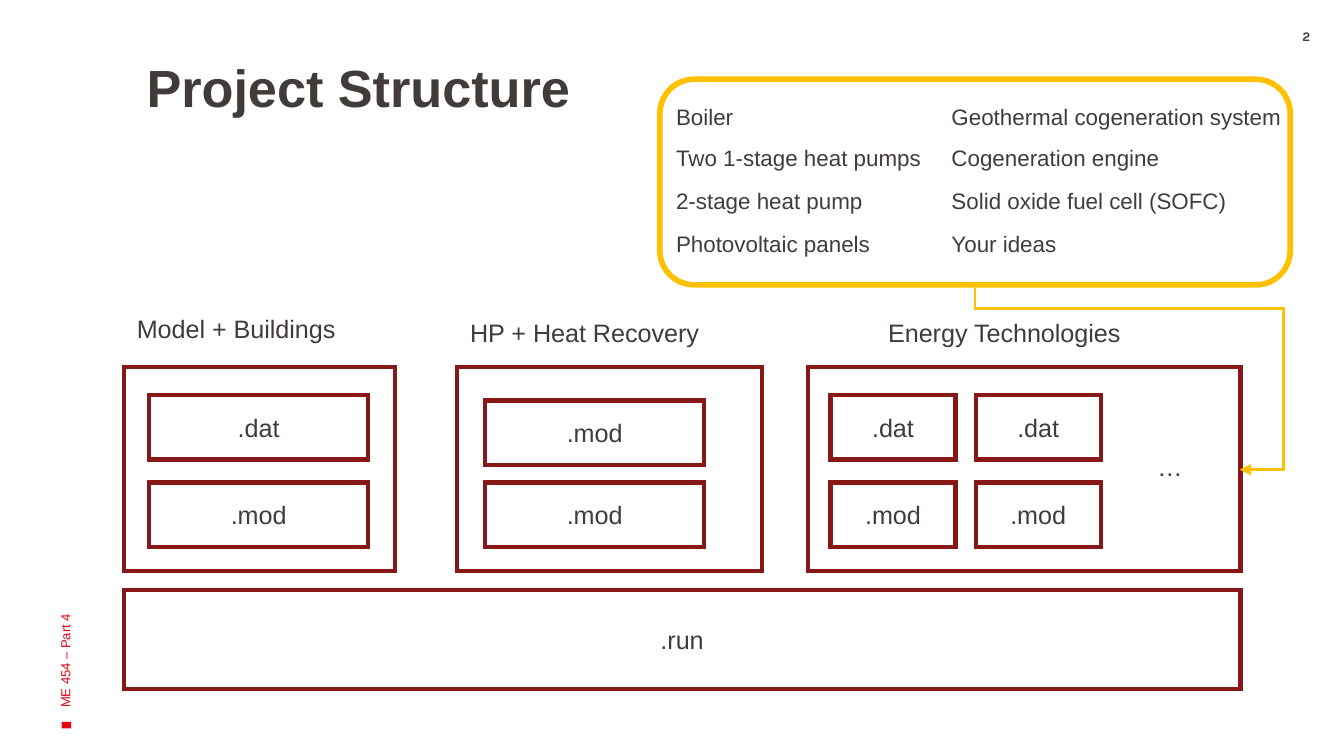
import pptx
import pptx.util
import pptx.dml.color
import pptx.enum.shapes
import pptx.enum.text
import pptx.oxml.ns
from lxml import etree

Inches, Pt = pptx.util.Inches, pptx.util.Pt
SHAPE = pptx.enum.shapes.MSO_SHAPE
ALIGN = pptx.enum.text.PP_ALIGN
ANCHOR = pptx.enum.text.MSO_ANCHOR
qn = pptx.oxml.ns.qn

# Content
COLORS = {"text": "413C3A", "frame": "881717", "accent": "FFC000",
          "red": "E30613", "white": "FFFFFF"}
TITLE = "Project Structure"
FOOTER = "ME 454 – Part 4"
TECHNOLOGIES = [
    ("Boiler", "Geothermal cogeneration system"),
    ("Two 1-stage heat pumps", "Cogeneration engine"),
    ("2-stage heat pump", "Solid oxide fuel cell (SOFC)"),
    ("Photovoltaic panels", "Your ideas"),
]
# Each group: label, label box, frame left and width,
# first file left, file width, file top, columns of files
GROUPS = [
    ("Model + Buildings", (0.92, 2.28, 2.04, 0.4), 0.92, 2.02,
     1.11, 1.63, 2.94, [(".dat", ".mod")]),
    ("HP + Heat Recovery", (3.4, 2.31, 2.27, 0.4), 3.4, 2.27,
     3.61, 1.63, 2.98, [(".mod", ".mod")]),
    ("Energy Technologies", (6.51, 2.31, 2.42, 0.4), 6.01, 3.22,
     6.18, 0.93, 2.94, [(".dat", ".mod"), (".dat", ".mod")]),
]

# Layout
SLIDE_W = Inches(10)
SLIDE_H = SLIDE_W * 9 // 16
LEFT, RIGHT = 0.92, 9.23
FRAME_TOP, FRAME_H = 2.73, 1.52
FILE_H, FILE_BOTTOM_ROW, FILE_GAP = 0.48, 3.59, 0.15
TABLE_COLS, TABLE_ROWS = (2.05, 2.81), (0.31, 0.32, 0.32, 0.32)


def rgb(name):
    return pptx.dml.color.RGBColor.from_string(COLORS[name])


def write(tf, text, size, color="text", font="Arial", bold=False, align=ALIGN.LEFT):
    p = tf.paragraphs[0]
    p.text = text
    p.alignment = align
    p.font.size, p.font.name, p.font.bold = Pt(size), font, bold
    p.font.color.rgb = rgb(color)


def add_text(slide, box, text, size, **style):
    sp = slide.shapes.add_textbox(*map(Inches, box))
    sp.text_frame.word_wrap = True
    write(sp.text_frame, text, size, **style)
    return sp


def add_box(slide, box, text="", line="frame", fill="white", width=2.25,
            kind=SHAPE.RECTANGLE):
    sp = slide.shapes.add_shape(kind, *map(Inches, box))
    sp.shadow.inherit = False
    if fill:
        sp.fill.solid()
        sp.fill.fore_color.rgb = rgb(fill)
    else:
        sp.fill.background()
    if line:
        sp.line.color.rgb = rgb(line)
        sp.line.width = Pt(width)
        etree.SubElement(sp._element.spPr.find(qn("a:ln")), qn("a:miter"), lim="800000")
    else:
        sp.line.fill.background()
    if text:
        sp.text_frame.vertical_anchor = ANCHOR.MIDDLE
        write(sp.text_frame, text, 13.5, align=ALIGN.CENTER)
    return sp


def add_furniture(slide):
    marker = add_box(slide, (0.47, 5.36, 0.05, 0.07), line=None, fill="red")
    marker.rotation = 270
    footer = add_text(slide, (-1.34, 3.04, 3.65, 1), FOOTER, 7, color="red")
    footer.rotation = 270
    footer.text_frame.vertical_anchor = ANCHOR.MIDDLE
    number = add_text(slide, (9.44, 0.21, 0.56, 0.18), "2", 7, font="Karla",
                      bold=True, align=ALIGN.CENTER)
    number.text_frame.margin_top = number.text_frame.margin_bottom = 0


def add_title(slide):
    title = slide.shapes.title
    title.left, title.top, title.width, title.height = map(
        Inches, (0.99, 0.36, 3.66, 0.57))
    title.text_frame.vertical_anchor = ANCHOR.TOP
    write(title.text_frame, TITLE, 28, bold=True)


def add_groups(slide):
    for label, label_box, left, width, file_left, file_w, file_top, columns in GROUPS:
        add_box(slide, (left, FRAME_TOP, width, FRAME_H))
        add_text(slide, label_box, label, 13.5)
        for c, files in enumerate(columns):
            x = file_left + c * (file_w + FILE_GAP)
            for y, name in zip((file_top, FILE_BOTTOM_ROW), files):
                add_box(slide, (x, y, file_w, FILE_H), name)
    add_box(slide, (8.28, 3.23, 0.85, FILE_H), "…", line=None)
    add_box(slide, (LEFT, 4.39, RIGHT - LEFT, 0.74), ".run")


def add_technologies(slide):
    table = slide.shapes.add_table(
        len(TABLE_ROWS), len(TABLE_COLS), Inches(4.93), Inches(0.73),
        Inches(sum(TABLE_COLS)), Inches(sum(TABLE_ROWS))).table
    table.first_row = table.horz_banding = False
    for column, width in zip(table.columns, TABLE_COLS):
        column.width = Inches(width)
    for row, height, names in zip(table.rows, TABLE_ROWS, TECHNOLOGIES):
        row.height = Inches(height)
        for cell, name in zip(row.cells, names):
            cell.fill.background()
            write(cell.text_frame, name, 12)
    add_box(slide, (4.91, 0.59, 4.69, 1.53), line="accent", fill=None, width=3,
            kind=SHAPE.ROUNDED_RECTANGLE)


def add_arrow(slide):
    # Three-bend elbow from the technologies box to the right frame
    left, top, width, height = 7.55, 1.82, 1.38, 1.97
    cx = slide.shapes.add_connector(
        pptx.enum.shapes.MSO_CONNECTOR.ELBOW, Inches(left + width), Inches(top),
        Inches(left), Inches(top + height))
    cx.line.color.rgb = rgb("accent")
    cx.line.width = Pt(1.5)
    props = cx._element.spPr
    props.find(qn("a:xfrm")).set("rot", str(270 * 60000))
    geometry = props.find(qn("a:prstGeom"))
    geometry.set("prst", "bentConnector4")
    guides = geometry.find(qn("a:avLst"))
    if guides is None:
        guides = etree.SubElement(geometry, qn("a:avLst"))
    for name, value in (("adj1", 13300), ("adj2", 116600)):
        etree.SubElement(guides, qn("a:gd"), name=name, fmla=f"val {value}")
    line = props.find(qn("a:ln"))
    etree.SubElement(line, qn("a:miter"), lim="800000")
    etree.SubElement(line, qn("a:tailEnd"), type="triangle")
    etree.SubElement(props, qn("a:effectLst"))


def main():
    prs = pptx.Presentation()
    prs.slide_width, prs.slide_height = SLIDE_W, SLIDE_H
    slide = prs.slides.add_slide(prs.slide_layouts[5])
    add_furniture(slide)
    add_groups(slide)
    add_technologies(slide)
    add_title(slide)
    add_arrow(slide)
    prs.save("out.pptx")


if __name__ == "__main__":
    main()
